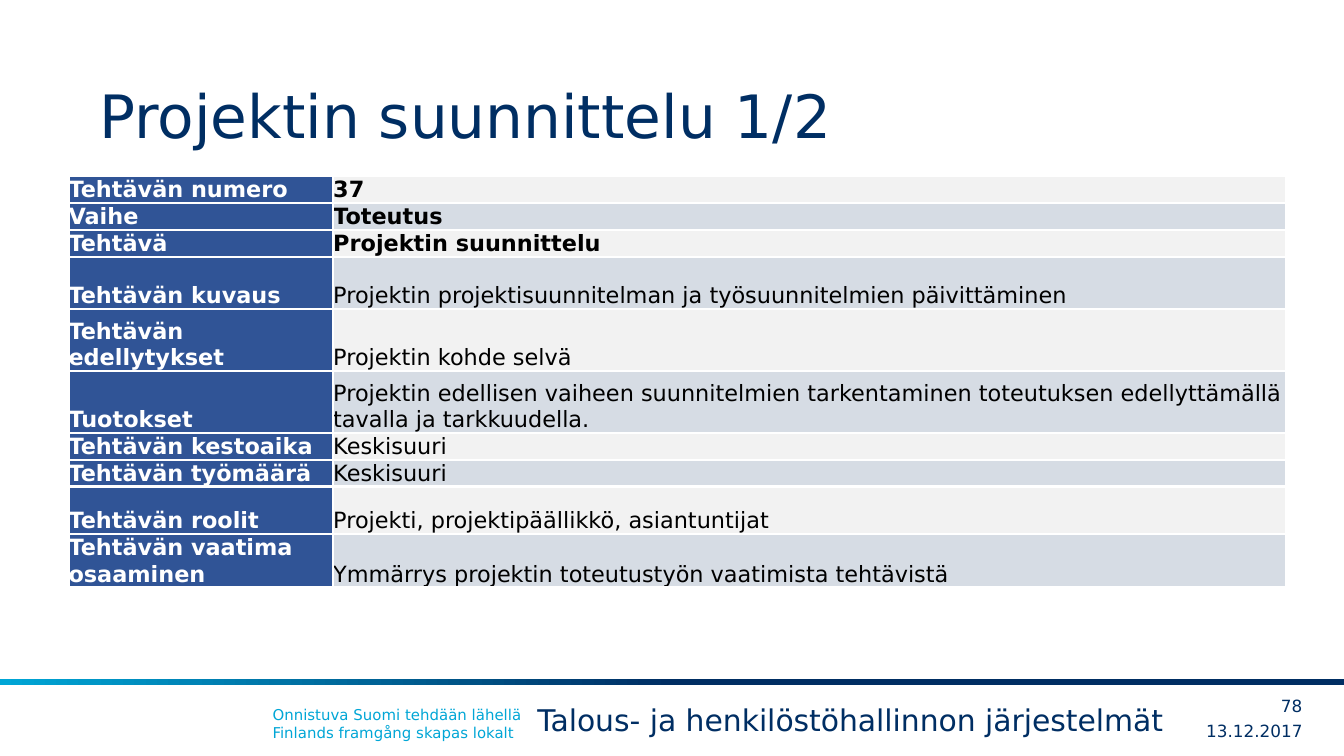
"""Build the project planning task slide."""
from dataclasses import dataclass

from lxml import etree
from pptx import Presentation
from pptx.dml.color import RGBColor
from pptx.enum.shapes import MSO_SHAPE
from pptx.enum.text import MSO_ANCHOR, PP_ALIGN
from pptx.oxml.ns import qn
from pptx.slide import Slide
from pptx.table import _Cell
from pptx.util import Inches, Pt

RECTANGLE = MSO_SHAPE.RECTANGLE
TOP, MIDDLE, BOTTOM = MSO_ANCHOR.TOP, MSO_ANCHOR.MIDDLE, MSO_ANCHOR.BOTTOM
LEFT, RIGHT = PP_ALIGN.LEFT, PP_ALIGN.RIGHT

FONT = "DejaVu Sans"
NAVY = RGBColor(0x00, 0x2E, 0x63)
CYAN = RGBColor(0x00, 0xA6, 0xD6)
HEADER_BLUE = RGBColor(0x30, 0x54, 0x96)
WHITE = RGBColor(0xFF, 0xFF, 0xFF)
BLACK = RGBColor(0x00, 0x00, 0x00)
BANDS = (RGBColor(0xF2, 0xF2, 0xF2), RGBColor(0xD6, 0xDC, 0xE4))
BORDER_WIDTH = Pt(1.5)
PAGE_WIDTH = 10
PAGE_HEIGHT = PAGE_WIDTH * 9 / 16
COLUMN_WIDTHS = (1.97, 7.09)
TABLE_HEIGHT = 3.06


@dataclass(frozen=True)
class Label:
    text: str
    left: float
    top: float
    width: float
    height: float
    size: int
    color: RGBColor = NAVY
    align: PP_ALIGN = LEFT
    anchor: MSO_ANCHOR = TOP
    inset_x: float = 0.1
    inset_y: float = 0.05


@dataclass(frozen=True)
class TaskRow:
    name: str
    value: str
    height: float = 0.04
    bold: bool = False


LABELS = (
    Label("Onnistuva Suomi tehdään lähellä\vFinlands framgång skapas lokalt",
          1.93, 5.2, 6.54, 0.37, 8, CYAN),
    Label("13.12.2017", 8.7, 5.33, 0.99, 0.22, 9, NAVY, RIGHT, MIDDLE, 0, 0),
    Label("78", 9.26, 5.14, 0.43, 0.22, 9, NAVY, RIGHT, MIDDLE, 0, 0),
    Label("Projektin suunnittelu 1/2", 0.74, 0.23, 8.51, 0.94, 32,
          anchor=BOTTOM, inset_x=0),
    Label("Talous- ja henkilöstöhallinnon järjestelmät", 3.9, 5.17, 5, 0.37, 16),
)
TASK_ROWS = (
    TaskRow("Tehtävän numero", "37", bold=True),
    TaskRow("Vaihe", "Toteutus", bold=True),
    TaskRow("Tehtävä", "Projektin suunnittelu", 0.14, True),
    TaskRow("Tehtävän kuvaus",
            "Projektin projektisuunnitelman ja työsuunnitelmien päivittäminen", 0.39),
    TaskRow("Tehtävän edellytykset", "Projektin kohde selvä", 0.46),
    TaskRow("Tuotokset",
            "Projektin edellisen vaiheen suunnitelmien tarkentaminen toteutuksen "
            "edellyttämällä tavalla ja tarkkuudella.", 0.46),
    TaskRow("Tehtävän kestoaika", "Keskisuuri"),
    TaskRow("Tehtävän työmäärä", "Keskisuuri", 0.18),
    TaskRow("Tehtävän roolit", "Projekti, projektipäällikkö, asiantuntijat", 0.35),
    TaskRow("Tehtävän vaatima osaaminen",
            "Ymmärrys projektin toteutustyön vaatimista tehtävistä", 0.39),
)


def add_footer_bar(page: Slide) -> None:
    bar = page.shapes.add_shape(RECTANGLE, 0, Inches(5.05), Inches(PAGE_WIDTH), Inches(0.05))
    bar.shadow.inherit = False
    bar.line.fill.background()
    bar.fill.gradient()
    bar.fill.gradient_angle = 180
    for stop, position, color in zip(bar.fill.gradient_stops, (0.5, 1), (NAVY, CYAN)):
        stop.position = position
        stop.color.rgb = color


def add_label(page: Slide, label: Label) -> None:
    box = page.shapes.add_textbox(Inches(label.left), Inches(label.top),
                                  Inches(label.width), Inches(label.height))
    frame = box.text_frame
    frame.word_wrap = True
    frame.vertical_anchor = label.anchor
    frame.margin_left = frame.margin_right = Inches(label.inset_x)
    frame.margin_top = frame.margin_bottom = Inches(label.inset_y)
    frame.text = label.text
    para = frame.paragraphs[0]
    para.alignment = label.align
    para.font.name = FONT
    para.font.size = Pt(label.size)
    para.font.color.rgb = label.color


def add_borders(cell: _Cell) -> None:
    properties = cell._tc.get_or_add_tcPr()
    for side in ("a:lnL", "a:lnR", "a:lnT", "a:lnB"):
        line = etree.SubElement(properties, qn(side), w=str(BORDER_WIDTH))
        fill = etree.SubElement(line, qn("a:solidFill"))
        etree.SubElement(fill, qn("a:srgbClr"), val=str(WHITE))


def fill_cell(cell: _Cell, text: str, fill: RGBColor, color: RGBColor, bold: bool) -> None:
    add_borders(cell)
    cell.fill.solid()
    cell.fill.fore_color.rgb = fill
    cell.margin_left = cell.margin_right = cell.margin_top = cell.margin_bottom = 0
    cell.vertical_anchor = BOTTOM
    cell.text = text
    font = cell.text_frame.paragraphs[0].font
    font.name = FONT
    font.size = Pt(12)
    font.bold = bold
    font.color.rgb = color


def add_task_table(page: Slide, rows: tuple[TaskRow, ...]) -> None:
    holder = page.shapes.add_table(
        len(rows), len(COLUMN_WIDTHS), Inches(0.51), Inches(1.31),
        Inches(sum(COLUMN_WIDTHS)), Inches(TABLE_HEIGHT))
    table = holder.table
    table.first_row = table.horz_banding = False
    for column, width in zip(table.columns, COLUMN_WIDTHS):
        column.width = Inches(width)
    for index, row in enumerate(rows):
        table.rows[index].height = Inches(row.height)
        fill_cell(table.cell(index, 0), row.name, HEADER_BLUE, WHITE, True)
        fill_cell(table.cell(index, 1), row.value, BANDS[index % 2], BLACK, row.bold)
    holder.height = Inches(TABLE_HEIGHT)


def main() -> None:
    deck = Presentation()
    deck.slide_width, deck.slide_height = Inches(PAGE_WIDTH), Inches(PAGE_HEIGHT)
    page = deck.slides.add_slide(deck.slide_layouts[6])
    add_footer_bar(page)
    for label in LABELS:
        add_label(page, label)
    add_task_table(page, TASK_ROWS)
    deck.save("out.pptx")


if __name__ == "__main__":
    main()
